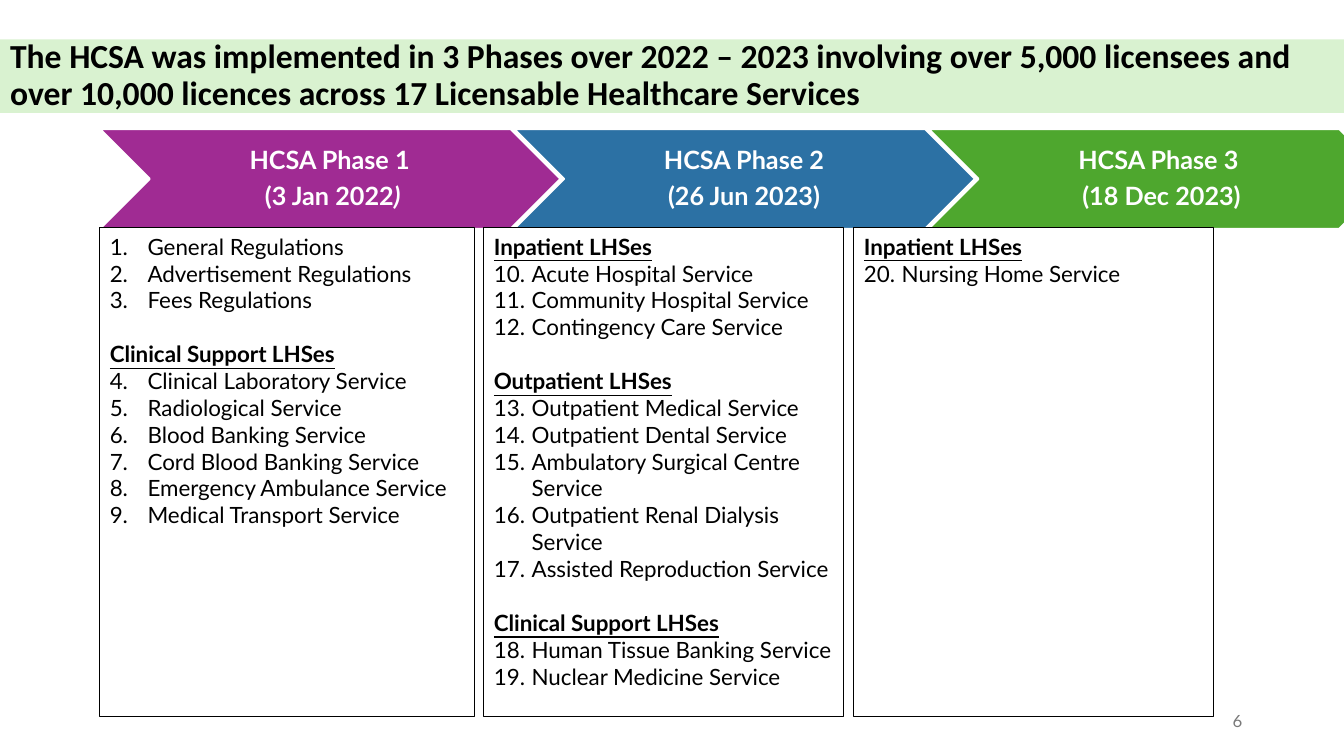
from lxml import etree
from pptx import Presentation
from pptx.dml.color import RGBColor
from pptx.enum.shapes import MSO_SHAPE as SHAPE
from pptx.enum.text import MSO_ANCHOR as ANCHOR, MSO_AUTO_SIZE as AUTO, PP_ALIGN as ALIGN
from pptx.oxml.ns import qn
from pptx.util import Inches, Pt

COLORS = {
    "band": "D9F2D0", "purple": "A02B93", "blue": "2C71A4", "green": "4EA72E",
    "white": "FFFFFF", "black": "000000", "grey": "797979",
}
TITLE = ("The HCSA was implemented in 3 Phases over 2022 – 2023 involving over "
         "5,000 licensees and over 10,000 licences across 17 Licensable Healthcare Services")
PHASES = [
    ("HCSA Phase 1 ", [("(3 Jan 2022", False), (")", True)], "purple"),
    ("HCSA Phase 2 ", [("(26 Jun 2023) ", False)], "blue"),
    ("HCSA Phase 3 ", [("(18 Dec 2023)", False)], "green"),
]
LISTS = [
    (0.99, 3.72, [
        (None, ["General Regulations", "Advertisement Regulations", "Fees Regulations"]),
        ("Clinical Support LHSes", [
            "Clinical Laboratory Service", "Radiological Service", "Blood Banking Service",
            "Cord Blood Banking Service", "Emergency Ambulance Service",
            "Medical Transport Service"]),
    ]),
    (4.8, 3.57, [
        ("Inpatient LHSes", [
            "Acute Hospital Service", "Community Hospital Service",
            "Contingency Care Service"]),
        ("Outpatient LHSes", [
            "Outpatient Medical Service", "Outpatient Dental Service",
            "Ambulatory Surgical Centre Service", "Outpatient Renal Dialysis Service",
            "Assisted Reproduction Service"]),
        ("Clinical Support LHSes", [
            "Human Tissue Banking Service", "Nuclear Medicine Service"]),
    ]),
    (8.47, 3.57, [("Inpatient LHSes", ["Nursing Home Service"])]),
]


def rgb(name):
    return RGBColor.from_string(COLORS[name])


def add_run(p, text, size, color, bold=False, font="Lato"):
    r = p.add_run()
    r.text = text
    r.font.name = font
    r.font.size = Pt(size)
    r.font.bold = bold
    r.font.color.rgb = rgb(color)
    return r


def next_paragraph(tf):
    return tf.add_paragraph() if tf.paragraphs[0].runs else tf.paragraphs[0]


def add_box(s, kind, x, y, w, h, fill, line, width):
    sp = s.shapes.add_shape(kind, Inches(x), Inches(y), Inches(w), Inches(h))
    sp.shadow.inherit = False
    sp.fill.solid()
    sp.fill.fore_color.rgb = rgb(fill)
    sp.line.color.rgb = rgb(line)
    sp.line.width = Pt(width)
    sp.text_frame.word_wrap = True
    return sp


def set_number(p, start):
    pPr = p._p.get_or_add_pPr()
    pPr.set("marL", str(Inches(0.375)))
    pPr.set("indent", str(-Inches(0.375)))
    etree.SubElement(pPr, qn("a:buFont"), typeface="+mj-lt")
    etree.SubElement(pPr, qn("a:buAutoNum"), type="arabicPeriod", startAt=str(start))


def add_title(s, x, y, w, h):
    sp = s.shapes.title
    sp.left, sp.top, sp.width, sp.height = (Inches(v) for v in (x, y, w, h))
    sp.fill.solid()
    sp.fill.fore_color.rgb = rgb("band")
    tf = sp.text_frame
    tf.word_wrap = True
    tf.auto_size = AUTO.NONE
    tf.vertical_anchor = ANCHOR.MIDDLE
    p = tf.paragraphs[0]
    p.alignment = ALIGN.LEFT
    p.line_spacing = 0.9
    add_run(p, TITLE, 24, "black", True, "Calibri")


def add_phase(s, x, y, w, h, name, date, color):
    sp = add_box(s, SHAPE.CHEVRON, x, y, w, h, color, "white", 1.5)
    tf = sp.text_frame
    tf.vertical_anchor = ANCHOR.MIDDLE
    tf.margin_left = Inches(0.08)
    tf.margin_right = tf.margin_top = tf.margin_bottom = Inches(0.03)
    for parts in ([(name, False)], date):
        p = next_paragraph(tf)
        p.alignment = ALIGN.CENTER
        p.line_spacing = 0.9
        p.space_after = Pt(6.3)
        for text, italic in parts:
            add_run(p, text, 18, "white", True).font.italic = italic


def add_list(s, x, y, w, h, groups, number):
    sp = add_box(s, SHAPE.RECTANGLE, x, y, w, h, "white", "black", 0.75)
    tf = sp.text_frame
    tf.vertical_anchor = ANCHOR.TOP
    for i, (heading, items) in enumerate(groups):
        if heading:
            p = next_paragraph(tf)
            p.alignment = ALIGN.LEFT
            if i:
                p.space_before = Pt(19.2)
            add_run(p, heading, 16, "black", True).font.underline = True
        for item in items:
            p = next_paragraph(tf)
            p.alignment = ALIGN.LEFT
            set_number(p, number)
            add_run(p, item, 16, "black")
        number += len(items)
    return number


def add_page_number(s, x, y, w, h):
    tf = s.shapes.add_textbox(Inches(x), Inches(y), Inches(w), Inches(h)).text_frame
    tf.word_wrap = True
    tf.vertical_anchor = ANCHOR.MIDDLE
    p = tf.paragraphs[0]
    p.alignment = ALIGN.RIGHT
    add_run(p, "6", 12, "grey")


def main():
    prs = Presentation()
    prs.slide_width, prs.slide_height = Inches(13.33), Inches(7.5)
    s = prs.slides.add_slide(prs.slide_layouts[5])
    add_title(s, 0, 0.39, 13.33, 0.73)
    add_page_number(s, 9.42, 6.95, 3, 0.4)
    for i, (name, date, color) in enumerate(PHASES):
        add_phase(s, 0.99 + 4.11 * i, 1.28, 4.57, 0.99, name, date, color)
    number = 1
    for x, w, groups in LISTS:
        number = add_list(s, x, 2.26, w, 4.85, groups, number)
    prs.save("out.pptx")


if __name__ == "__main__":
    main()
